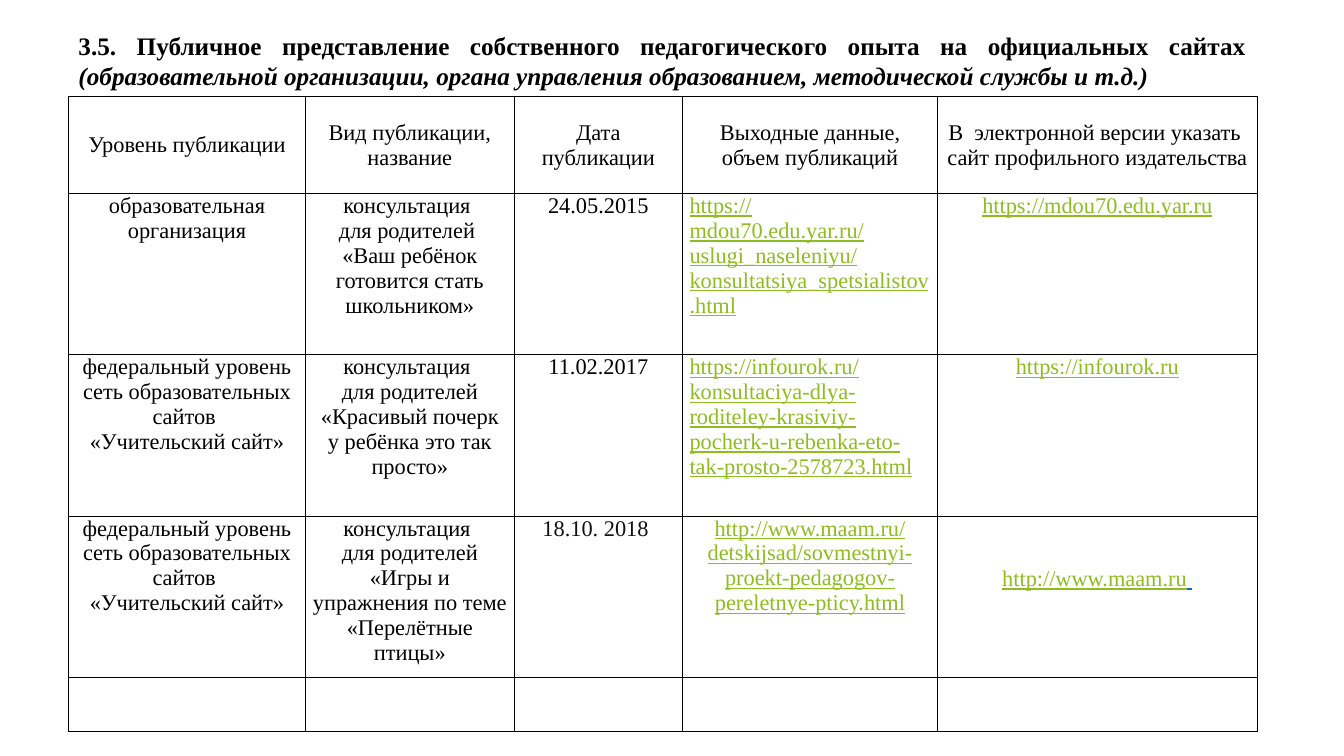
from lxml.etree import SubElement
from pptx import Presentation
from pptx.dml.color import RGBColor
from pptx.enum.text import MSO_ANCHOR, MSO_AUTO_SIZE, PP_ALIGN
from pptx.oxml.ns import qn
from pptx.util import Inches, Pt

BLACK = RGBColor(0x00, 0x00, 0x00)
DARK = RGBColor(0x11, 0x11, 0x11)
GREEN = RGBColor(0x90, 0xBB, 0x23)
BLUE = RGBColor(0x00, 0x70, 0xC0)
FONT = "Times New Roman"

COL_WIDTHS = [2.35, 2.07, 1.67, 2.53, 3.17]
ROW_HEIGHTS = [0.96, 1.6, 1.6, 1.6, 0.54]
DATE_COL, OUTPUT_COL, SITE_COL = 2, 3, 4
FEDERAL = "федеральный уровень\nсеть образовательных сайтов \n«Учительский сайт»"
ROWS = [
    ["Уровень публикации", "Вид публикации, название", "Дата публикации",
     "Выходные данные, объем публикаций",
     "В  электронной версии указать  сайт профильного издательства"],
    ["образовательная организация",
     "консультация \nдля родителей \n«Ваш ребёнок готовится стать школьником»",
     "24.05.2015",
     "https://mdou70.edu.yar.ru/uslugi_naseleniyu/konsultatsiya_spetsialistov.html",
     "https://mdou70.edu.yar.ru"],
    [FEDERAL,
     "консультация \nдля родителей «Красивый почерк у ребёнка это так просто»",
     "11.02.2017",
     "https://infourok.ru/konsultaciya-dlya-roditeley-krasiviy-pocherk-u-rebenka-eto-tak-prosto-2578723.html",
     "https://infourok.ru"],
    [FEDERAL,
     "консультация \nдля родителей\n«Игры и упражнения по теме «Перелётные птицы»",
     "18.10. 2018 ",
     "http://www.maam.ru/detskijsad/sovmestnyi-proekt-pedagogov-pereletnye-pticy.html",
     "http://www.maam.ru"],
    [""] * 5,
]


def style_run(r, size, color=BLACK, underline=False):
    r.font.name = FONT
    r.font.size = Pt(size)
    r.font.color.rgb = color
    r.font.underline = underline


def add_title(s, left, top, width, height):
    tf = s.shapes.add_textbox(*map(Inches, (left, top, width, height))).text_frame
    tf.word_wrap = True
    tf.auto_size = MSO_AUTO_SIZE.SHAPE_TO_FIT_TEXT
    p = tf.paragraphs[0]
    p.alignment = PP_ALIGN.JUSTIFY
    parts = [
        ("3.5. Публичное представление собственного педагогического опыта "
         "на официальных сайтах ", False),
        ("(образовательной организации, органа управления образованием, "
         "методической службы и т.д.)", True),
    ]
    for text, italic in parts:
        r = p.add_run()
        r.text = text
        style_run(r, 18)
        r.font.bold = True
        r.font.italic = italic


def add_borders(cell):
    tc_pr = cell._tc.get_or_add_tcPr()
    for side in ("lnL", "lnR", "lnT", "lnB"):
        ln = SubElement(tc_pr, qn(f"a:{side}"), w=str(Pt(0.5)))
        fill = SubElement(ln, qn("a:solidFill"))
        SubElement(fill, qn("a:srgbClr"), val=str(BLACK))


def fill_cell(cell, text, align, color, underline):
    add_borders(cell)
    cell.fill.background()
    cell.margin_left = cell.margin_right = Inches(0.07)
    cell.margin_top = cell.margin_bottom = 0
    cell.text_frame.text = text
    for p in cell.text_frame.paragraphs:
        p.alignment = align
        for r in p.runs:
            style_run(r, 16, color, underline)


def add_publications(s, left, top, width, height):
    shape = s.shapes.add_table(len(ROWS), len(COL_WIDTHS),
                               *map(Inches, (left, top, width, height)))
    table = shape.table
    table.first_row = table.horz_banding = False
    for column, col_width in zip(table.columns, COL_WIDTHS):
        column.width = Inches(col_width)
    for row, row_height in zip(table.rows, ROW_HEIGHTS):
        row.height = Inches(row_height)

    for i, texts in enumerate(ROWS):
        for j, text in enumerate(texts):
            link = i > 0 and j >= OUTPUT_COL
            left_aligned = j == OUTPUT_COL and i in (1, 2)
            color = GREEN if link else DARK if (i, j) == (3, DATE_COL) else BLACK
            fill_cell(table.cell(i, j), text,
                      PP_ALIGN.LEFT if left_aligned else PP_ALIGN.CENTER,
                      color, link)
            if i == 0:
                table.cell(i, j).vertical_anchor = MSO_ANCHOR.MIDDLE

    last_site = table.cell(3, SITE_COL)
    last_site.margin_top = Inches(0.5)
    r = last_site.text_frame.paragraphs[0].add_run()
    r.text = " "
    style_run(r, 16, BLUE, True)


def main():
    prs = Presentation()
    prs.slide_width, prs.slide_height = Inches(13.33), Inches(7.5)
    s = prs.slides.add_slide(prs.slide_layouts[6])
    add_title(s, 0.68, 0.25, 11.78, 0.71)
    add_publications(s, 0.68, 0.96, sum(COL_WIDTHS), sum(ROW_HEIGHTS))
    prs.save("out.pptx")


if __name__ == "__main__":
    main()
